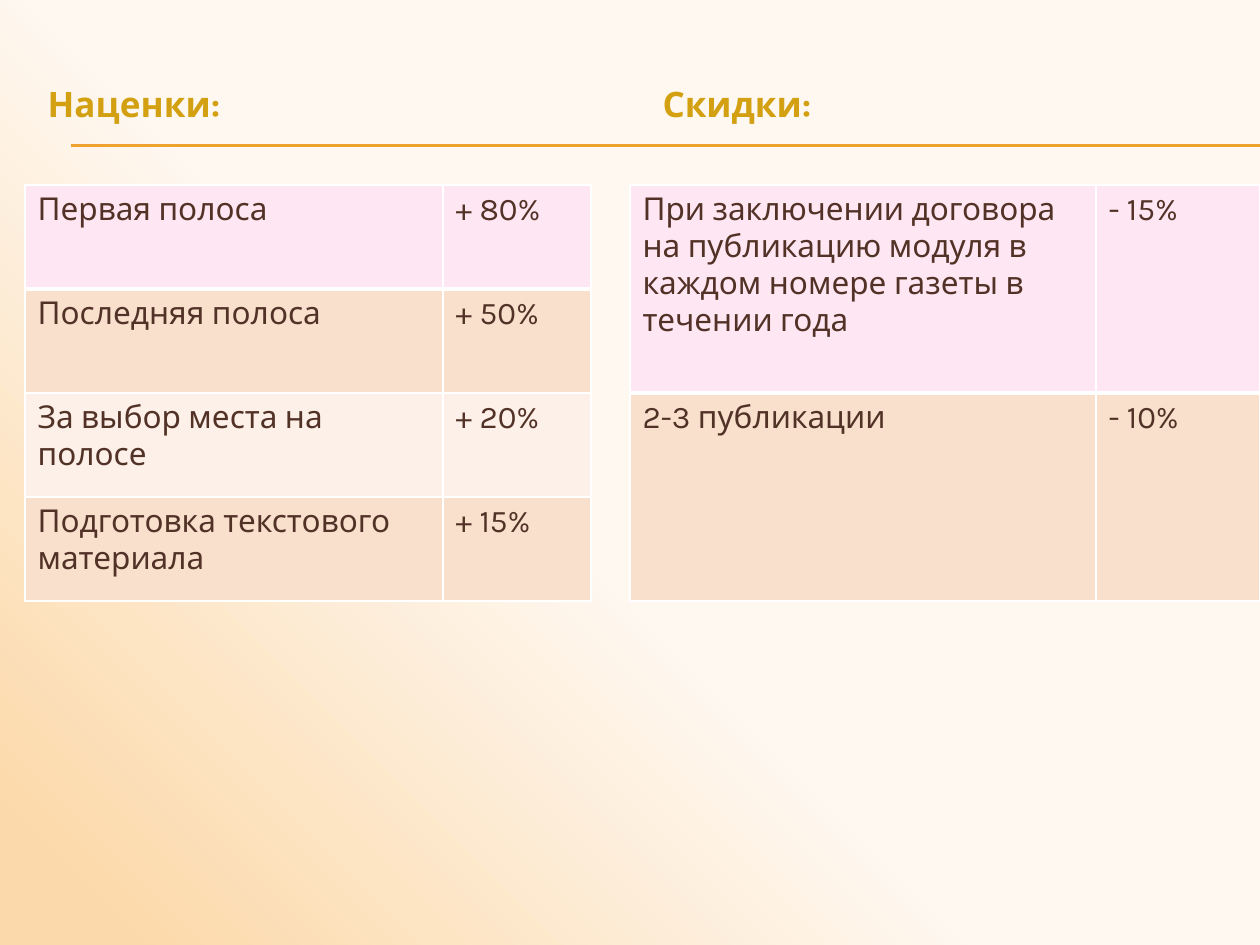
from dataclasses import dataclass
from lxml.etree import SubElement
from pptx import Presentation
from pptx.dml.color import RGBColor
from pptx.enum.shapes import MSO_CONNECTOR
from pptx.enum.text import MSO_ANCHOR, PP_ALIGN
from pptx.oxml import parse_xml
from pptx.oxml.ns import nsdecls, qn
from pptx.util import Emu, Pt

PX = 914400 // 126


@dataclass(frozen=True)
class Theme:
    font: str = "Karla"
    heading: str = "D2A010"
    text: str = "523227"
    rule: str = "F0A22E"
    border: str = "FFFFFF"
    first_row: str = "FEE7F2"
    dark_band: str = "F9E0CD"
    light_band: str = "FCF0E8"
    glow: str = "FCD9AA"
    paper: str = "FEF8F1"
    heading_size: int = 20
    text_size: int = 18


THEME = Theme()


def px(length):
    return Emu(length * PX)


def color(value):
    return RGBColor.from_string(value)


def paint_background(page):
    fill = page.background.fill
    fill.gradient()
    fill.gradient_angle = 45
    stops = ((0.06, THEME.glow), (0.45, THEME.paper))
    for stop, (position, value) in zip(fill.gradient_stops, stops):
        stop.position = position
        stop.color.rgb = color(value)


def add_rule(page, left, right, top):
    rule = page.shapes.add_connector(
        MSO_CONNECTOR.STRAIGHT, px(left), px(top), px(right), px(top))
    rule.line.color.rgb = color(THEME.rule)
    rule.line.width = Pt(0.75)
    SubElement(rule._element.spPr, qn("a:effectLst"))


def write(paragraph, text, size, value, bold=False):
    span = paragraph.add_run()
    span.text = text
    span.font.name = THEME.font
    span.font.size = Pt(size)
    span.font.bold = bold
    span.font.color.rgb = color(value)


def place_heading(box, text, left, top, width, height):
    box.left, box.top, box.width, box.height = map(px, (left, top, width, height))
    frame = box.text_frame
    frame.word_wrap = True
    frame.vertical_anchor = MSO_ANCHOR.TOP
    paragraph = frame.paragraphs[0]
    paragraph.alignment = PP_ALIGN.LEFT
    write(paragraph, text, THEME.heading_size, THEME.heading, bold=True)


def set_borders(cell, bottom):
    properties = cell._tc.get_or_add_tcPr()
    widths = {"lnL": 1, "lnR": 1, "lnT": 1, "lnB": bottom}
    for index, (side, width) in enumerate(widths.items()):
        properties.insert(index, parse_xml(
            f'<a:{side} {nsdecls("a")} w="{Pt(width)}"><a:solidFill>'
            f'<a:srgbClr val="{THEME.border}"/></a:solidFill></a:{side}>'))


def row_fill(index):
    if index == 0:
        return THEME.first_row
    return THEME.dark_band if index % 2 else THEME.light_band


def add_rates(page, rates, left, top, widths, row_height):
    table = page.shapes.add_table(
        len(rates), len(widths), px(left), px(top),
        px(sum(widths)), px(row_height * len(rates))).table
    table.first_row = False
    table.horz_banding = False
    for column, width in zip(table.columns, widths):
        column.width = px(width)
    for index, (row, texts) in enumerate(zip(table.rows, rates)):
        row.height = px(row_height)
        for cell, text in zip(row.cells, texts):
            cell.fill.solid()
            cell.fill.fore_color.rgb = color(row_fill(index))
            set_borders(cell, bottom=1 if index else 3)
            write(cell.text_frame.paragraphs[0], text, THEME.text_size, THEME.text)


def main():
    deck = Presentation()
    deck.slide_width, deck.slide_height = px(1260), px(945)
    page = deck.slides.add_slide(deck.slide_layouts.get_by_name("Comparison"))
    paint_background(page)

    title, left_heading, left_body, right_heading, right_body = page.placeholders
    for empty in (title, left_body, right_body):
        empty._element.getparent().remove(empty._element)

    for top in (145, 146):
        add_rule(page, 71, 1260, top)
    place_heading(left_heading, "Наценки:", 35, 76, 515, 69)
    place_heading(right_heading, "Скидки:", 650, 76, 599, 69)

    markups = (
        ("Первая полоса", "+ 80%"),
        ("Последняя полоса", "+ 50%"),
        ("За выбор места на полосе", "+ 20%"),
        ("Подготовка текстового материала", "+ 15%"),
    )
    discounts = (
        ("При заключении договора на публикацию модуля в каждом номере "
         "газеты в течении года", "- 15%"),
        ("2-3 публикации", "- 10%"),
    )
    add_rates(page, markups, 25, 185, (418, 148), 104)
    add_rates(page, discounts, 630, 185, (466, 164), 208)
    deck.save("out.pptx")


if __name__ == "__main__":
    main()
